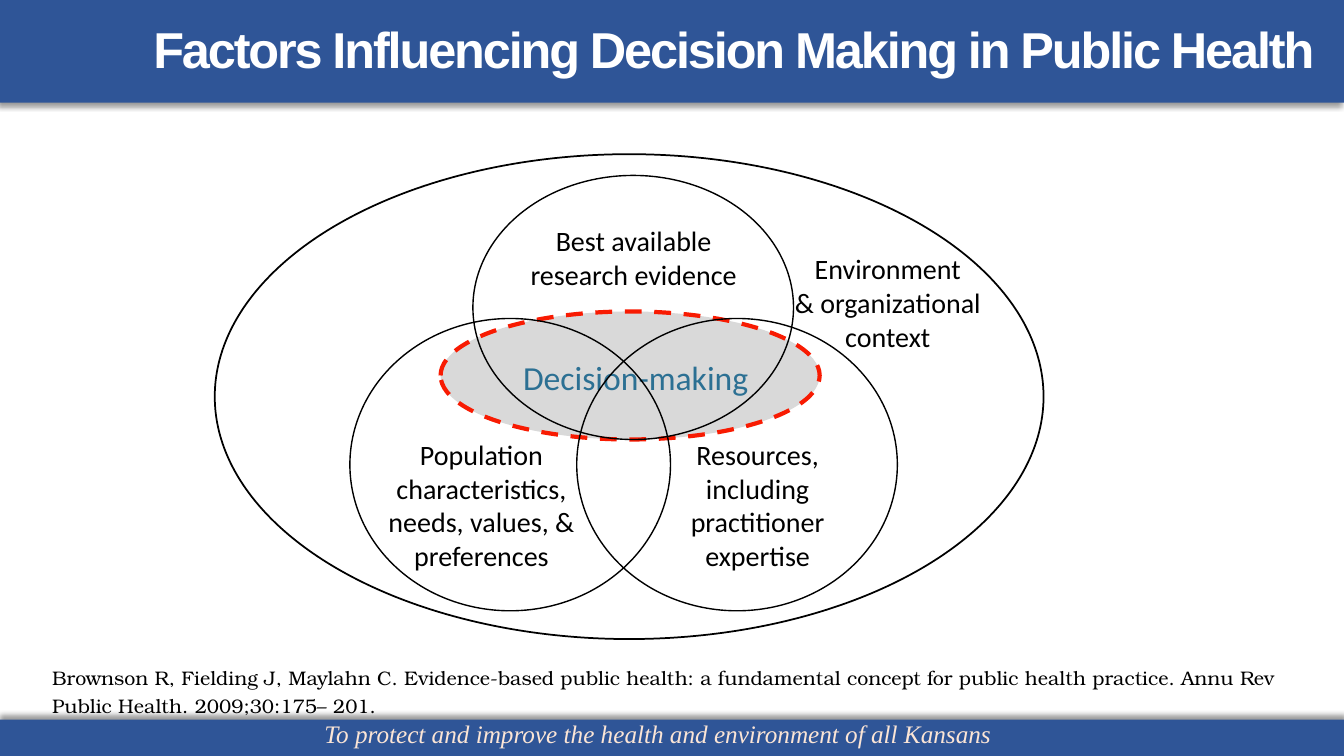
from lxml import etree
from pptx import Presentation
from pptx.dml.color import RGBColor
from pptx.enum.dml import MSO_LINE
from pptx.enum.shapes import MSO_SHAPE
from pptx.enum.text import MSO_ANCHOR, PP_ALIGN
from pptx.oxml.ns import qn
from pptx.util import Inches, Pt

RECTANGLE, OVAL = MSO_SHAPE.RECTANGLE, MSO_SHAPE.OVAL
DASH = MSO_LINE.DASH
TOP, MIDDLE = MSO_ANCHOR.TOP, MSO_ANCHOR.MIDDLE
LEFT, CENTER = PP_ALIGN.LEFT, PP_ALIGN.CENTER

COLORS = {
    "banner": "2F5597",
    "motto": "FBE5D6",
    "white": "FFFFFF",
    "black": "000000",
    "decision_fill": "D9D9D9",
    "decision_line": "F81B02",
    "decision_text": "2C7093",
}


def color(name):
    return RGBColor.from_string(COLORS[name])


def inches(lengths):
    return [Inches(length) for length in lengths]


def add_shadow(shape, degrees):
    effects = shape._element.spPr.find(qn("a:effectLst"))
    shadow = etree.SubElement(
        effects, qn("a:outerShdw"), blurRad=str(Pt(4)), dist=str(Pt(3)),
        dir=str(degrees * 60000), algn="t", rotWithShape="0")
    tint = etree.SubElement(shadow, qn("a:srgbClr"), val=COLORS["black"])
    etree.SubElement(tint, qn("a:alpha"), val="40000")


def add_banner(page, top, height, shadow_degrees):
    banner = page.shapes.add_shape(RECTANGLE, *inches((0, top, 13.33, height)))
    banner.shadow.inherit = False
    banner.fill.solid()
    banner.fill.fore_color.rgb = color("banner")
    banner.line.fill.background()
    add_shadow(banner, shadow_degrees)


def add_oval(page, place, width, line="black", fill=None, dash=None):
    oval = page.shapes.add_shape(OVAL, *inches(place))
    oval.shadow.inherit = False
    if fill:
        oval.fill.solid()
        oval.fill.fore_color.rgb = color(fill)
    else:
        oval.fill.background()
    oval.line.color.rgb = color(line)
    oval.line.width = Pt(width)
    if dash:
        oval.line.dash_style = dash


def add_text(page, place, lines, size, font="Calibri", ink="black",
             align=CENTER, bold=False, italic=False, spacing=None):
    """Add a text box with one paragraph per line and return its frame."""
    frame = page.shapes.add_textbox(*inches(place)).text_frame
    frame.word_wrap = True
    frame.vertical_anchor = TOP
    frame.text = "\n".join(lines)
    for para in frame.paragraphs:
        para.alignment = align
        para.line_spacing = spacing
        para.font.name = font
        para.font.size = Pt(size)
        para.font.bold = bold
        para.font.italic = italic
        para.font.color.rgb = color(ink)
    return frame


def add_title(page, title):
    frame = add_text(page, (1.27, 0.23, 12.31, 0.6), [title], 36, "Arial",
                     "white", LEFT, bold=True, spacing=0.85)
    frame.vertical_anchor = MIDDLE
    frame.margin_left = frame.margin_right = Inches(0.25)
    frame.margin_top = frame.margin_bottom = Inches(0.25)
    span = frame.paragraphs[0].runs[0]
    span.font._element.set("spc", "-150")


def add_diagram(page):
    add_oval(page, (2.13, 1.53, 8.22, 4.81), 1.25)
    add_oval(page, (4.37, 3.09, 3.76, 1.27), 3, "decision_line",
             "decision_fill", DASH)
    add_text(page, (4.93, 3.49, 2.75, 0.42), ["Decision-making"], 24,
             ink="decision_text")
    add_oval(page, (4.69, 1.74, 3.18, 2.62), 1)
    labels = [
        ((4.95, 2.17, 2.67, 0.71), ["Best available research evidence"]),
        ((7.78, 2.45, 2.05, 1.01),
         ["Environment", "& organizational context"]),
        ((3.73, 4.29, 2.09, 1.32),
         ["Population characteristics, needs, values, & preferences"]),
        ((6.43, 4.29, 2.17, 1.32),
         ["Resources, including practitioner expertise"]),
    ]
    for place, lines in labels:
        add_text(page, place, lines, 20)
    for left in (3.47, 5.72):
        add_oval(page, (left, 3.16, 3.18, 2.9), 1)


def main():
    deck = Presentation()
    deck.slide_width, deck.slide_height = inches((13.33, 7.5))
    page = deck.slides.add_slide(deck.slide_layouts[6])
    add_banner(page, -0.01, 1.03, 135)
    add_banner(page, 7.14, 0.37, 270)
    add_text(page, (3.12, 7.08, 7.07, 0.4),
             ["To protect and improve the health and environment of all Kansans"],
             18, "Times New Roman", "motto", LEFT, italic=True)
    add_title(page, "Factors Influencing Decision Making in Public Health")
    add_text(page, (0.42, 6.51, 12.5, 0.4),
             ["Brownson R, Fielding J, Maylahn C. Evidence-based public health: "
              "a fundamental concept for public health practice. "
              "Annu Rev Public Health. 2009;30:175– 201."],
             14, "TeX Gyre Bonum", align=LEFT, spacing=1.2)
    add_diagram(page)
    deck.save("out.pptx")


if __name__ == "__main__":
    main()
